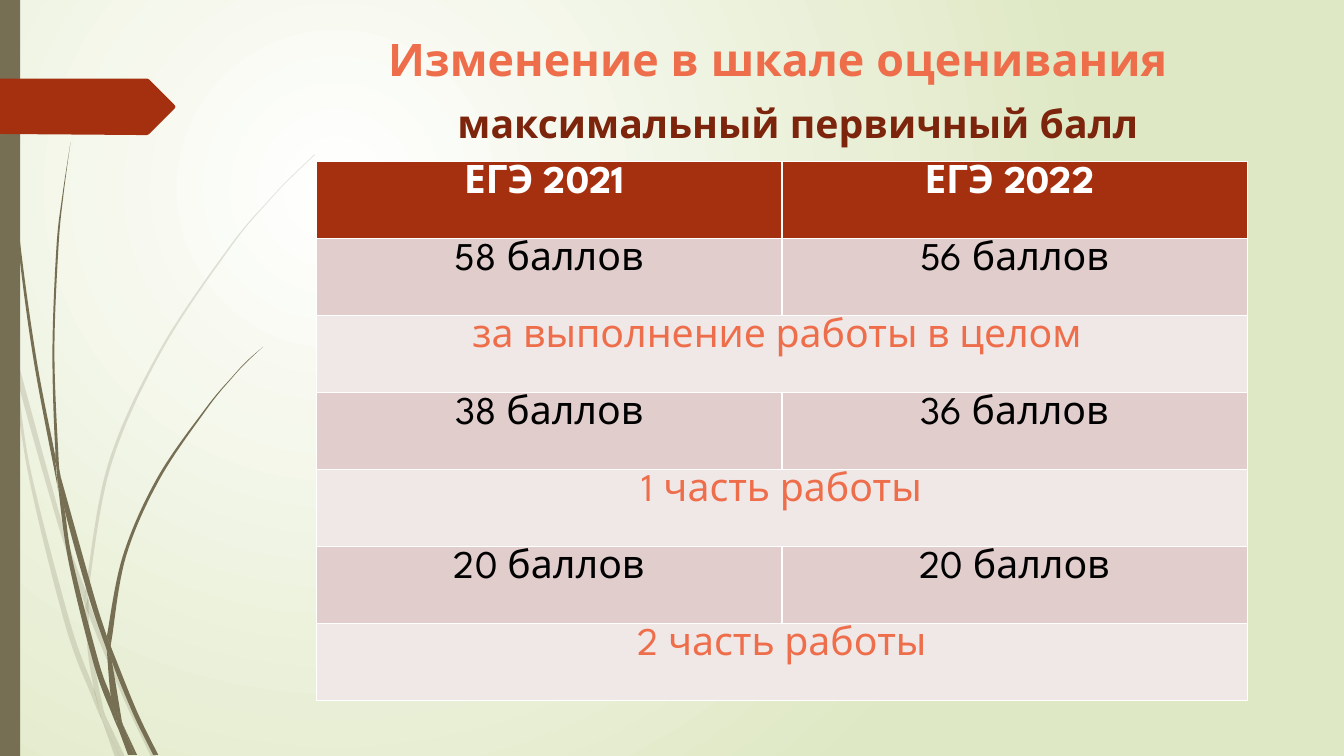
"""Builds the slide on changes in the exam grading scale."""
from lxml import etree
from pptx import Presentation
from pptx import util as u
from pptx.dml import color
from pptx.enum import shapes, text
from pptx.oxml import ns

COLUMNS, ROWS = 1333, 750
CELL = u.Inches(7.5) // ROWS
FONT = "League Spartan"
COLORS = {
    "white": "FFFFFF", "black": "000000", "meadow": "DFE8C4", "olive": "766F54",
    "rust": "A53010", "coral": "EE6E4B", "brown": "7C240C",
    "band": "E1CDCC", "pale": "F0E8E7",
}
SCORES = [
    ("58 баллов", "56 баллов", "за выполнение работы в целом "),
    ("38 баллов", "36 баллов", "1 часть работы"),
    ("20 баллов", "20 баллов", "2 часть работы"),
]
FAINT_BLADES = [
    [[(11, 350), (9, 322), (0, 282)], [(0, 299), (10, 344), (11, 350)]],
    [[(14, 345), (17, 376), (58, 522), (84, 599)], [(85, 586), (62, 520), (14, 345)]],
    [[(88, 596), (88, 610), (123, 694), (150, 751)],
     [(155, 751), (127, 692), (92, 607), (88, 596)]],
    [[(119, 751), (124, 751)], [(105, 711), (119, 751)]],
    [[(11, 350), (28, 470), (65, 621), (92, 693), (101, 714)],
     [(99, 707), (93, 683), (70, 619), (31, 469), (17, 376), (11, 350)]],
    [[(84, 599), (87, 646), (93, 683), (96, 692), (105, 711)],
     [(103, 706), (91, 646), (88, 610), (88, 608), (84, 599)]],
    [[(312, 153), (289, 175), (268, 197), (228, 244), (158, 348), (107, 461),
      (85, 584), (85, 586)],
     [(88, 596), (88, 584), (110, 462), (160, 349), (229, 245), (268, 198),
      (290, 175), (312, 154)]],
    [[(101, 714), (114, 751)], [(119, 751), (101, 714)]],
    [[(88, 608), (88, 610), (88, 596)], [(85, 586), (84, 599), (88, 608)]],
    [[(93, 683), (99, 707), (101, 714), (119, 751)], [(105, 711), (96, 692), (93, 683)]],
]
DARK_BLADES = [
    [[(3, 0), (4, 48), (7, 110), (17, 233), (33, 355), (56, 477), (57, 481)],
     [(55, 457), (55, 453), (36, 355), (19, 232), (8, 109), (5, 48), (4, 0)]],
    [[(60, 472), (64, 505), (88, 592), (106, 645)],
     [(106, 633), (106, 631), (93, 590), (60, 472)]],
    [[(110, 641), (111, 656), (132, 708), (152, 749)],
     [(157, 749), (136, 706), (113, 649), (110, 641)]],
    [[(57, 477), (68, 557), (93, 659), (111, 708), (117, 722)],
     [(116, 717), (110, 691), (98, 657), (72, 556), (64, 505), (57, 477)]],
    [[(70, 141), (62, 193), (56, 245), (52, 349), (55, 449), (60, 472)],
     [(60, 472), (58, 453), (54, 349), (58, 245), (63, 193), (70, 141)]],
    [[(133, 749), (136, 749)], [(122, 719), (133, 749)]],
    [[(57, 477), (64, 505)], [(60, 472), (55, 449)], [(55, 453), (57, 477)]],
    [[(261, 344), (245, 358), (231, 373), (204, 405), (156, 474), (122, 551),
      (106, 631)],
     [(110, 641), (111, 633), (125, 552), (158, 476), (205, 406), (231, 374),
      (245, 359), (261, 344)]],
    [[(117, 722), (127, 749)], [(131, 749), (117, 722)]],
    [[(106, 645), (110, 691), (116, 706), (122, 719)],
     [(121, 716), (111, 656), (109, 651), (106, 645)]],
    [[(106, 645), (109, 651), (111, 656)], [(110, 641), (106, 631)],
     [(106, 633), (106, 645)]],
    [[(110, 691), (116, 717), (117, 722), (130, 749)],
     [(133, 749), (122, 719), (116, 706), (110, 691)]],
]
ARROW = [[(0, 78), (146, 78)], [(148, 79), (173, 104)],
         [(173, 104), (174, 106), (173, 108)], [(148, 133), (146, 134)],
         [(136, 134), (0, 133)]]


def rgb(name):
    return color.RGBColor.from_string(COLORS[name])


def grid(*cells):
    return [int(cell * CELL) for cell in cells]


def curve(points):
    """Return two control points and an end point for each span of an edge."""
    padded = [points[0], *points, points[-1]]
    knots = []
    for a, b, c, d in zip(padded, padded[1:], padded[2:], padded[3:]):
        knots.append([q + (r - p) / 6 for p, q, r in zip(a, b, c)])
        knots.append([q - (r - p) / 6 for p, q, r in zip(b, c, d)])
        knots.append(c)
    return knots


def paint(shape, name, opacity=100):
    shape.shadow.inherit = False
    shape.fill.solid()
    shape.fill.fore_color.rgb = rgb(name)
    shape.line.fill.background()
    if opacity < 100:
        tint = shape.element.spPr.find(".//" + ns.qn("a:srgbClr"))
        etree.SubElement(tint, ns.qn("a:alpha"), val=str(opacity * 1000))


def add_outline(page, edges, name, opacity=100):
    start = end = edges[0][0]
    knots = []
    for edge in edges:
        if edge[0] != end:
            knots += [end, edge[0], edge[0]]
        knots += curve(edge)
        end = edge[-1]
    builder = page.shapes.build_freeform(*grid(*start))
    builder.add_line_segments([grid(*knot) for knot in knots], close=True)
    shape = builder.convert_to_shape()
    lines = shape.element.findall(".//" + ns.qn("a:lnTo"))
    for first, second, third in zip(lines[::3], lines[1::3], lines[2::3]):
        bend = etree.Element(ns.qn("a:cubicBezTo"))
        first.addprevious(bend)
        for line in (first, second, third):
            bend.append(line[0])
            line.getparent().remove(line)
    paint(shape, name, opacity)


def write(frame, words, size, name, bold):
    para = frame.paragraphs[0]
    para.alignment = text.PP_ALIGN.CENTER
    span = para.add_run()
    span.text = words
    span.font.name = FONT
    span.font.size = u.Pt(size)
    span.font.bold = bold
    span.font.color.rgb = rgb(name)
    return para


def add_heading(page, place, words, size, name):
    box = page.shapes.add_textbox(*grid(*place))
    box.text_frame.word_wrap = True
    write(box.text_frame, words, size, name, True)


def fill_cell(cell, words, ink, ground, bold=False):
    cell.fill.solid()
    cell.fill.fore_color.rgb = rgb(ground)
    cell.margin_left = cell.margin_right = u.Inches(0.07)
    cell.margin_top = cell.margin_bottom = u.Inches(0.03)
    if words:
        para = write(cell.text_frame, words, 28, ink, bold)
        para.line_spacing = 1.05
        para.space_after = u.Pt(8)


def add_scores(page, place):
    height = 1 + 2 * len(SCORES)
    table = page.shapes.add_table(height, 2, *grid(*place)).table
    for index, words in enumerate(("ЕГЭ 2021 ", "ЕГЭ 2022 ")):
        fill_cell(table.cell(0, index), words, "white", "rust", True)
    for group, (before, after, caption) in enumerate(SCORES):
        row = 1 + 2 * group
        for index, words in enumerate((before, after)):
            fill_cell(table.cell(row, index), words, "black", "band")
        for index, words in enumerate((caption, "")):
            fill_cell(table.cell(row + 1, index), words, "coral", "pale")
        table.cell(row + 1, 0).merge(table.cell(row + 1, 1))


def set_background(page):
    fill = page.background.fill
    fill.gradient()
    for position, (stop, name) in enumerate(zip(fill.gradient_stops, ("white", "meadow"))):
        stop.color.rgb = rgb(name)
        stop.position = position
    linear = page.element.find(".//" + ns.qn("a:lin"))
    radial = etree.Element(ns.qn("a:path"), path="circle")
    etree.SubElement(radial, ns.qn("a:fillToRect"),
                     l="50000", t="50000", r="100000", b="100000")
    linear.getparent().replace(linear, radial)


def main():
    deck = Presentation()
    deck.slide_width, deck.slide_height = grid(COLUMNS, ROWS)
    page = deck.slides.add_slide(deck.slide_layouts[6])
    set_background(page)
    for blades, opacity in ((FAINT_BLADES, 20), (DARK_BLADES, 100)):
        for edges in blades:
            add_outline(page, edges, "olive", opacity)
    sidebar = page.shapes.add_shape(shapes.MSO_SHAPE.RECTANGLE, *grid(0, 0, 20, ROWS))
    paint(sidebar, "olive")
    add_outline(page, ARROW, "rust")
    add_heading(page, (284, 27, 975, 77), "Изменение в шкале оценивания", 32, "coral")
    add_heading(page, (305, 94, 983, 552), "максимальный первичный балл ", 28, "brown")
    add_scores(page, (314, 160, 923, 535))
    deck.save("out.pptx")


if __name__ == "__main__":
    main()
